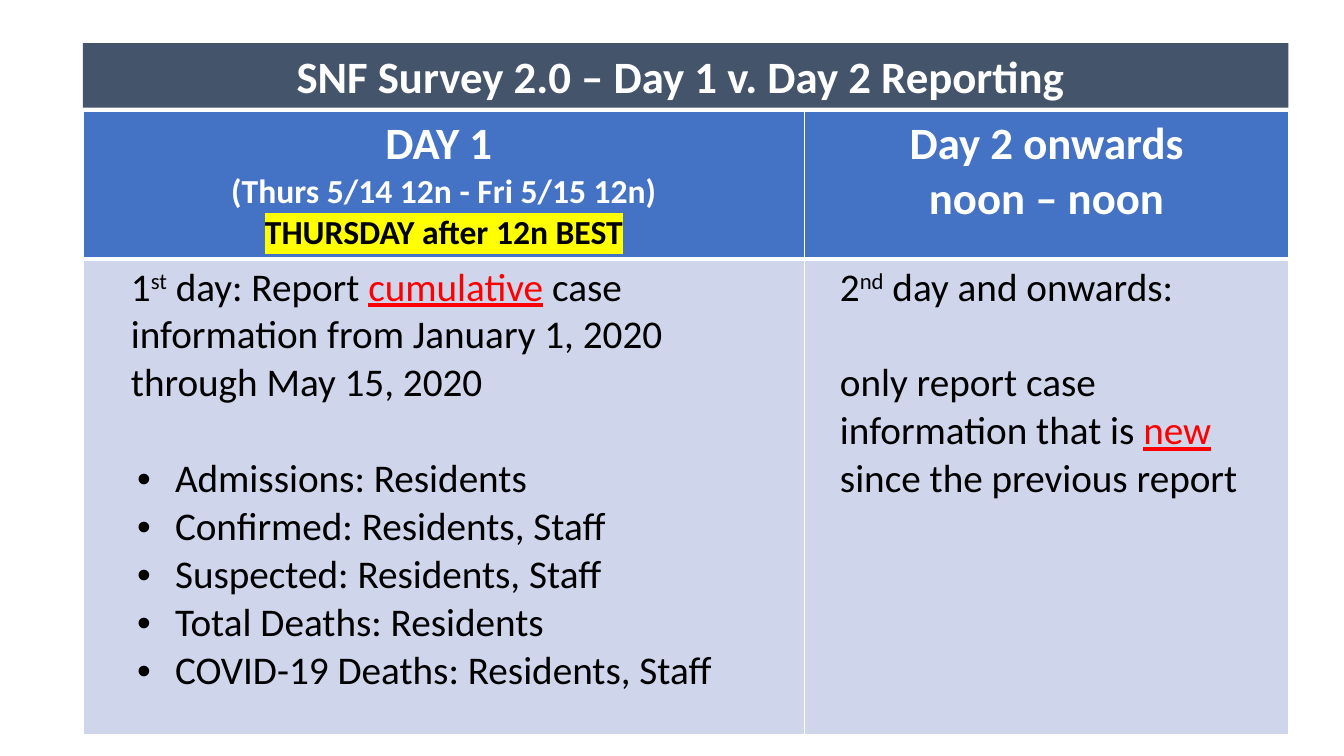
import pptx
import pptx.dml.color
import pptx.enum.shapes
import pptx.enum.text
import pptx.oxml.ns
import pptx.util
from lxml import etree

Pt = pptx.util.Pt

THEME = {
    "font": "Calibri",
    "title_fill": "44546A",
    "header_fill": "4472C4",
    "body_fill": "CFD5EA",
    "border": "FFFFFF",
    "highlight": "FFFF00",
    "styles": {
        "heading": {"size": 32, "color": "FFFFFF", "bold": True},
        "dates": {"size": 24, "color": "FFFFFF", "bold": True},
        "best": {"size": 24, "color": "000000", "bold": True, "highlight": True},
        "body": {"size": 28, "color": "000000"},
        "ordinal": {"size": 28, "color": "000000", "baseline": 30000},
        "key": {"size": 28, "color": "FF0000", "underline": True},
    },
}

TITLE = {"runs": [("SNF Survey 2.0 – Day 1 v. Day 2 Reporting ", "heading")],
         "center": True, "line_spacing": 0.9}

HEADERS = [
    [
        {"runs": [("DAY 1 ", "heading")], "center": True},
        {"runs": [("(Thurs 5/14 12n - Fri 5/15 12n)", "dates")], "center": True},
        {"runs": [("THURSDAY after 12n BEST", "best")], "center": True},
    ],
    [
        {"runs": [("Day 2 onwards", "heading")], "center": True},
        {"runs": [("noon – noon", "heading")], "center": True},
    ],
]

COUNTS = [
    "Admissions: Residents",
    "Confirmed: Residents, Staff",
    "Suspected: Residents, Staff",
    "Total Deaths: Residents",
    "COVID-19 Deaths: Residents, Staff",
]

BODY_LINE = 34.2

DAY_ONE = [
    {"runs": [("1", "body"), ("st", "ordinal"), (" day: Report ", "body"),
              ("cumulative", "key"),
              (" case information from January 1, 2020 through May 15, 2020", "body")],
     "margin": 27},
] + [
    {"runs": [(count, "body")], "margin": 58.5, "hanging": 27, "bullet": "•",
     "before": BODY_LINE if index == 0 else 0}
    for index, count in enumerate(COUNTS)
]

DAY_TWO = [
    {"runs": [("2", "body"), ("nd", "ordinal"), (" day and onwards:", "body")],
     "margin": 18},
    {"runs": [("only report case information that is ", "body"), ("new ", "key"),
              ("since the previous report", "body")],
     "margin": 18, "before": BODY_LINE},
]

ROWS = [
    {"cells": HEADERS, "height": 89.28, "fill": "header_fill",
     "borders": {"lnL": 1, "lnR": 1, "lnT": 1, "lnB": 3}},
    {"cells": [DAY_ONE, DAY_TWO], "height": 339.84, "fill": "body_fill",
     "borders": {"lnL": 1, "lnR": 1, "lnT": 3, "lnB": 1}},
]

SLIDE_SIZE = (960, 540)
LEFT = 59.3
COLUMNS = [515.5, 345.6]
WIDTH = sum(COLUMNS)
TITLE_TOP, TITLE_HEIGHT = 30.8, 46.2
TABLE_TOP = 79.9


def rgb(value):
    return pptx.dml.color.RGBColor.from_string(value)


def add_element(parent, tag, **attributes):
    element = etree.SubElement(parent, pptx.oxml.ns.qn(tag))
    for name, value in attributes.items():
        element.set(name, str(value))
    return element


def add_run(paragraph, text, style_name):
    style = THEME["styles"][style_name]
    run = paragraph.add_run()
    run.text = text
    font = run.font
    font.size = Pt(style["size"])
    font.bold = style.get("bold", False)
    font.underline = style.get("underline", False)
    font.color.rgb = rgb(style["color"])
    properties = run._r.get_or_add_rPr()
    if "baseline" in style:
        properties.set("baseline", str(style["baseline"]))
    if style.get("highlight"):
        highlight = add_element(properties, "a:highlight")
        add_element(highlight, "a:srgbClr", val=THEME["highlight"])
    font.name = THEME["font"]


def write_paragraphs(text_frame, contents):
    text_frame.word_wrap = True
    for index, content in enumerate(contents):
        paragraph = text_frame.paragraphs[0] if index == 0 else text_frame.add_paragraph()
        alignment = pptx.enum.text.PP_ALIGN
        paragraph.alignment = alignment.CENTER if content.get("center") else alignment.LEFT
        paragraph.line_spacing = content.get("line_spacing", 1.0)
        if content.get("before"):
            paragraph.space_before = Pt(content["before"])
        properties = paragraph._p.get_or_add_pPr()
        properties.set("marL", str(Pt(content.get("margin", 0))))
        properties.set("indent", str(-Pt(content.get("hanging", 0))))
        if "bullet" in content:
            add_element(properties, "a:buFont", typeface="Arial")
            add_element(properties, "a:buChar", char=content["bullet"])
        else:
            add_element(properties, "a:buNone")
        for text, style_name in content["runs"]:
            add_run(paragraph, text, style_name)


def format_cell(cell, row):
    properties = cell._tc.get_or_add_tcPr()
    for side, width in row["borders"].items():
        line = add_element(properties, "a:" + side, w=Pt(width))
        fill = add_element(line, "a:solidFill")
        add_element(fill, "a:srgbClr", val=THEME["border"])
    cell.fill.solid()
    cell.fill.fore_color.rgb = rgb(THEME[row["fill"]])


def add_reporting_table(slide):
    height = sum(row["height"] for row in ROWS)
    table = slide.shapes.add_table(len(ROWS), len(COLUMNS), Pt(LEFT), Pt(TABLE_TOP),
                                   Pt(WIDTH), Pt(height)).table
    table.first_row = False
    table.horz_banding = False
    for column, width in zip(table.columns, COLUMNS):
        column.width = Pt(width)
    for row_index, row in enumerate(ROWS):
        table.rows[row_index].height = Pt(row["height"])
        for column_index, contents in enumerate(row["cells"]):
            cell = table.cell(row_index, column_index)
            format_cell(cell, row)
            write_paragraphs(cell.text_frame, contents)


def add_title_bar(slide):
    shape = slide.shapes.add_shape(pptx.enum.shapes.MSO_SHAPE.RECTANGLE, Pt(LEFT),
                                   Pt(TITLE_TOP), Pt(WIDTH), Pt(TITLE_HEIGHT))
    shape.shadow.inherit = False
    shape.fill.solid()
    shape.fill.fore_color.rgb = rgb(THEME["title_fill"])
    shape.line.fill.background()
    shape.text_frame.vertical_anchor = pptx.enum.text.MSO_ANCHOR.BOTTOM
    write_paragraphs(shape.text_frame, [TITLE])


def main():
    presentation = pptx.Presentation()
    presentation.slide_width, presentation.slide_height = map(Pt, SLIDE_SIZE)
    slide = presentation.slides.add_slide(presentation.slide_layouts[6])
    add_reporting_table(slide)
    add_title_bar(slide)
    presentation.save("out.pptx")


if __name__ == "__main__":
    main()
